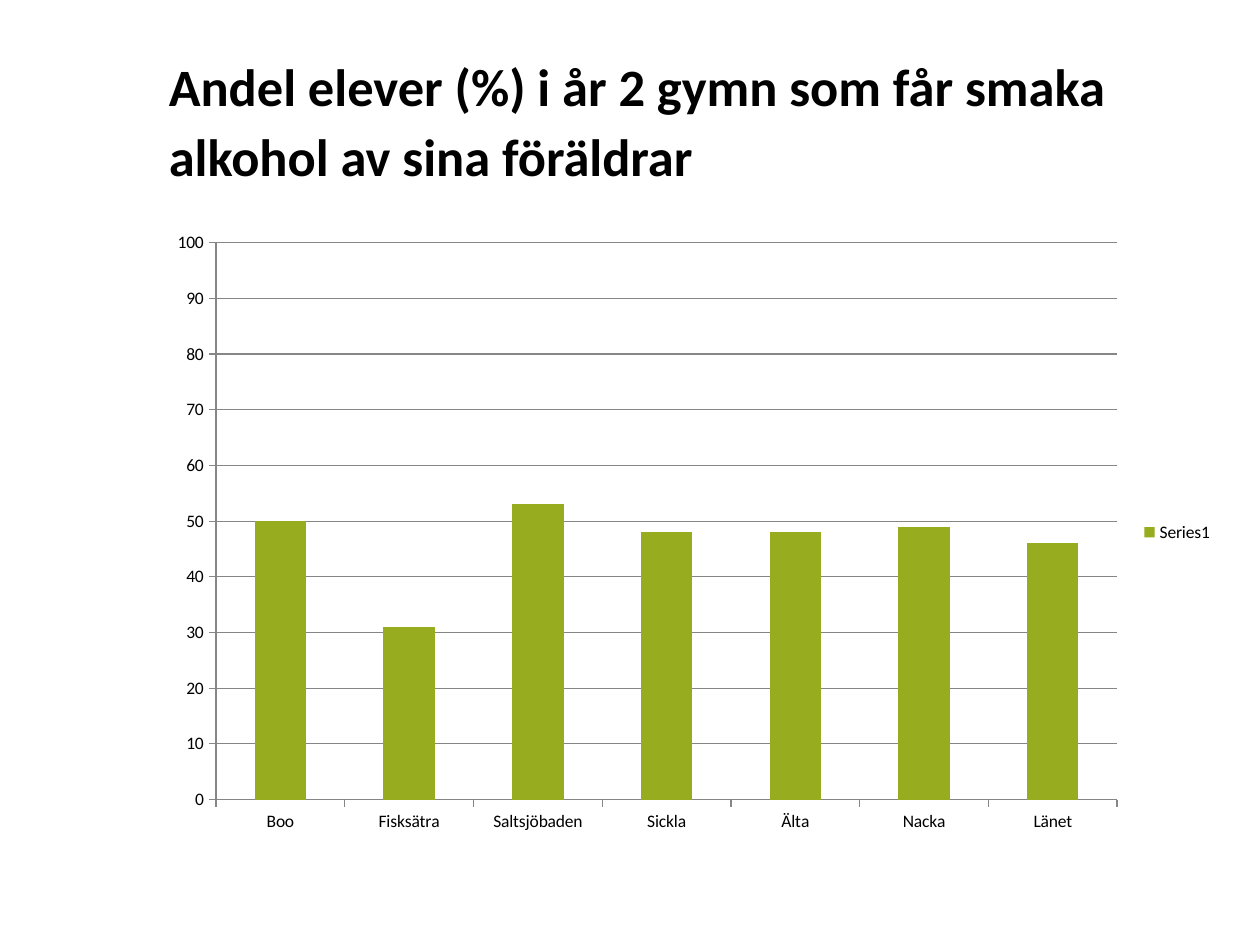
from pptx import Presentation
from pptx.chart.data import CategoryChartData
from pptx.dml.color import RGBColor
from pptx.enum import chart as c, text as t
from pptx.util import Pt

# Content
TITLE = "Andel elever (%) i år 2 gymn som får smaka alkohol av sina föräldrar"
SERIES = "Series1"
SHARES = {
    "Boo": 50,
    "Fisksätra": 31,
    "Saltsjöbaden": 53,
    "Sickla": 48,
    "Älta": 48,
    "Nacka": 49,
    "Länet": 46,
}

# Style
FONT = "Calibri"
BLACK = RGBColor(0x00, 0x00, 0x00)
GREEN = RGBColor(0x97, 0xAC, 0x1E)
GRAY = RGBColor(0x86, 0x86, 0x86)
LEFT, WIDTH = Pt(89.3), Pt(611.3)


def format_font(font, size, bold=False):
    font.name = FONT
    font.size = Pt(size)
    font.bold = bold
    font.color.rgb = BLACK


def format_line(line):
    line.color.rgb = GRAY
    line.width = Pt(0.75)


presentation = Presentation()
presentation.slide_width, presentation.slide_height = Pt(720), Pt(540)
slide = presentation.slides.add_slide(presentation.slide_layouts[5])

# Title
title = slide.shapes.title
title.left, title.top, title.width, title.height = LEFT, Pt(21.6), WIDTH, Pt(90)
frame = title.text_frame
frame.word_wrap = True
frame.auto_size = t.MSO_AUTO_SIZE.NONE
frame.vertical_anchor = t.MSO_ANCHOR.MIDDLE
paragraph = frame.paragraphs[0]
paragraph.alignment = t.PP_ALIGN.LEFT
paragraph.line_spacing = Pt(40)
run = paragraph.add_run()
run.text = TITLE
format_font(run.font, 30, bold=True)

# Column chart
data = CategoryChartData(number_format="General")
data.categories = list(SHARES)
data.add_series(SERIES, list(SHARES.values()))
chart = slide.shapes.add_chart(
    c.XL_CHART_TYPE.COLUMN_CLUSTERED, LEFT, Pt(126), WIDTH, Pt(356.4), data
).chart
chart.has_title = False
format_font(chart.font, 10)

plot = chart.plots[0]
plot.gap_width = 150
plot.vary_by_categories = False
fill = plot.series[0].format.fill
fill.solid()
fill.fore_color.rgb = GREEN

# Axes
for axis in (chart.category_axis, chart.value_axis):
    axis.major_tick_mark = c.XL_TICK_MARK.OUTSIDE
    axis.minor_tick_mark = c.XL_TICK_MARK.NONE
    format_line(axis.format.line)
value_axis = chart.value_axis
value_axis.minimum_scale, value_axis.maximum_scale = 0, 100
value_axis.major_unit = 10
value_axis.has_major_gridlines = True
format_line(value_axis.major_gridlines.format.line)

# Legend
chart.has_legend = True
chart.legend.position = c.XL_LEGEND_POSITION.RIGHT
chart.legend.include_in_layout = False

presentation.save("out.pptx")
